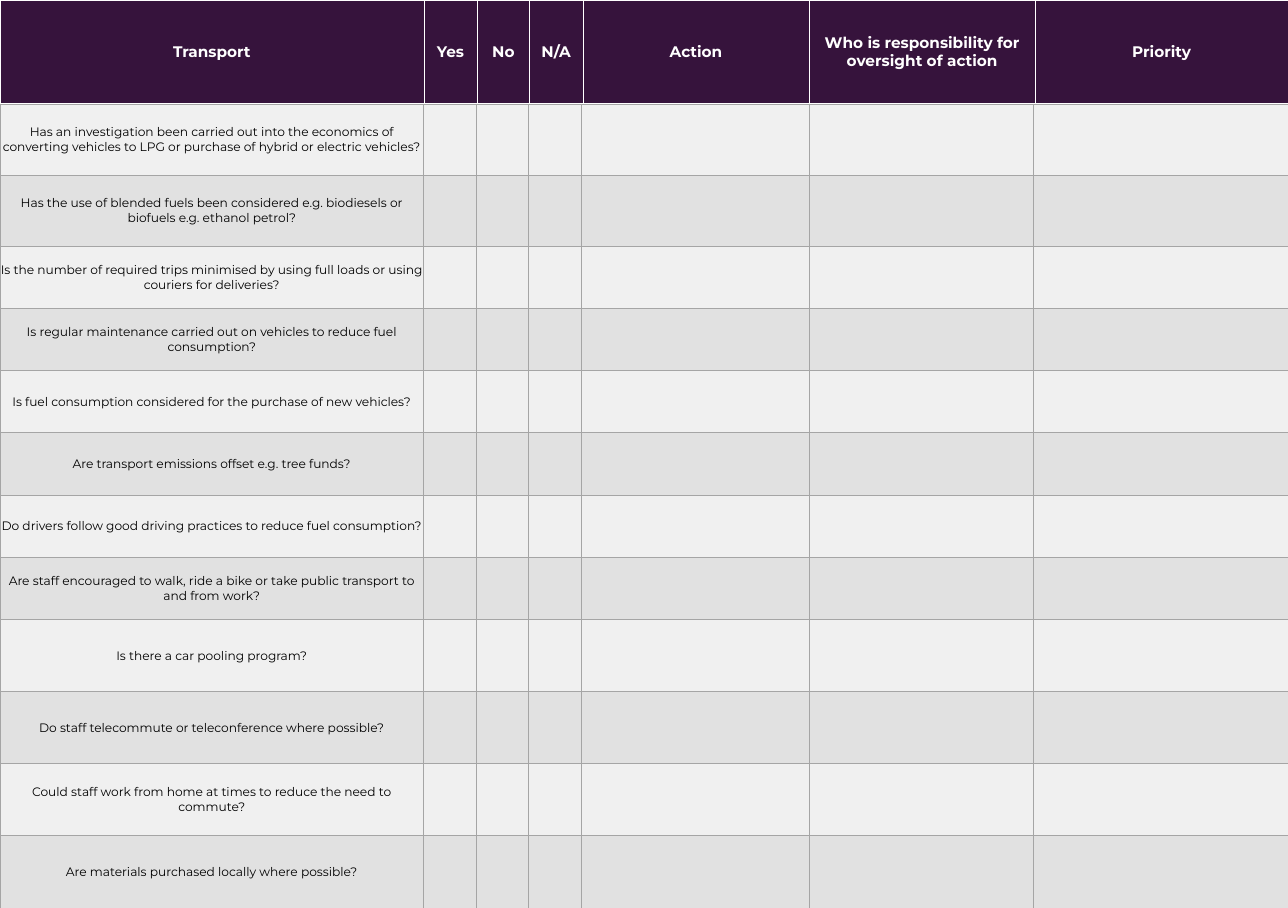
from lxml import etree
from pptx import Presentation
from pptx.dml.color import RGBColor
from pptx.enum.text import MSO_ANCHOR, PP_ALIGN
from pptx.oxml.ns import qn
from pptx.util import Inches, Pt

MIDDLE = MSO_ANCHOR.MIDDLE
CENTER = PP_ALIGN.CENTER
PLUM = RGBColor(0x36, 0x13, 0x3C)
WHITE = RGBColor(0xFF, 0xFF, 0xFF)
BLACK = RGBColor(0, 0, 0)
GREY = RGBColor(0xA5, 0xA5, 0xA5)
BANDS = RGBColor(0xF0, 0xF0, 0xF0), RGBColor(0xE1, 0xE1, 0xE1)
FONT = "Montserrat"

WIDE, TALL = 23.4, 16.5
HEAD = 1.89
HEAD_COLS = [7.7, 0.97, 0.95, 0.97, 4.11, 4.11, 4.59]
BODY_COLS = [7.7, 0.95, 0.95, 0.97, 4.14, 4.08, 4.62]
BODY_ROWS = [1.29] * 2 + [1.13] * 6 + [1.31] * 4

TITLES = ["Transport", "Yes", "No", "N/A", "Action",
          "Who is responsibility for oversight of action", "Priority"]
CHECKS = [
    "Has an investigation been carried out into the economics of converting "
    "vehicles to LPG or purchase of hybrid or electric vehicles?",
    "Has the use of blended fuels been considered e.g. biodiesels or biofuels "
    "e.g. ethanol petrol?",
    "Is the number of required trips minimised by using full loads or using "
    "couriers for deliveries?",
    "Is regular maintenance carried out on vehicles to reduce fuel consumption?",
    "Is fuel consumption considered for the purchase of new vehicles?",
    "Are transport emissions offset e.g. tree funds?",
    "Do drivers follow good driving practices to reduce fuel consumption?",
    "Are staff encouraged to walk, ride a bike or take public transport to and "
    "from work?",
    "Is there a car pooling program?",
    "Do staff telecommute or teleconference where possible?",
    "Could staff work from home at times to reduce the need to commute?",
    "Are materials purchased locally where possible?",
]


def add_grid(slide, box, cols, rows):
    """Add an unbanded table that fills the box with weighted columns and rows."""
    left, top, width, height = box
    frame = slide.shapes.add_table(len(rows), len(cols), Inches(left), Inches(top),
                                   Inches(width), Inches(height))
    table = frame.table
    table.first_row = table.horz_banding = False
    for col, share in zip(table.columns, cols):
        col.width = Inches(width * share / sum(cols))
    for row, share in zip(table.rows, rows):
        row.height = Inches(height * share / sum(rows))
    return table


def style_cell(cell, fill, line, base=1):
    """Give a cell its borders and fill, with a bottom line of base points."""
    props = cell._tc.get_or_add_tcPr()
    for side, size in zip("LRTB", (1, 1, 1, base)):
        edge = etree.SubElement(props, qn(f"a:ln{side}"), w=str(Pt(size)))
        solid = etree.SubElement(edge, qn("a:solidFill"))
        etree.SubElement(solid, qn("a:srgbClr"), val=str(line))
    cell.fill.solid()
    cell.fill.fore_color.rgb = fill


def write_cell(cell, text, size, color, bold=False):
    """Write centred text into a cell."""
    cell.vertical_anchor = MIDDLE
    para = cell.text_frame.paragraphs[0]
    para.alignment = CENTER
    run = para.add_run()
    run.text = text
    font = run.font
    font.name, font.size, font.bold = FONT, Pt(size), bold
    font.color.rgb = color


def draw_head(slide, box):
    """Draw the row of column titles."""
    table = add_grid(slide, box, HEAD_COLS, [1])
    for cell, title in zip(table.iter_cells(), TITLES):
        style_cell(cell, PLUM, WHITE, 3)
        write_cell(cell, title, 20, WHITE, True)


def draw_checks(slide, box):
    """Draw the checklist with blank answer cells."""
    table = add_grid(slide, box, BODY_COLS, BODY_ROWS)
    for i, (row, check) in enumerate(zip(table.rows, CHECKS)):
        for cell in row.cells:
            style_cell(cell, BANDS[i % 2], GREY)
        first = row.cells[0]
        first.margin_left = first.margin_right = first.margin_top = Inches(0.01)
        first.margin_bottom = 0
        write_cell(first, check, 16, BLACK)


def main():
    """Build the transport checklist and save it."""
    deck = Presentation()
    deck.slide_width, deck.slide_height = Inches(WIDE), Inches(TALL)
    slide = deck.slides.add_slide(deck.slide_layouts[6])
    draw_head(slide, (0, 0, WIDE, HEAD))
    draw_checks(slide, (0, HEAD, WIDE, TALL - HEAD))
    deck.save("out.pptx")


if __name__ == "__main__":
    main()
